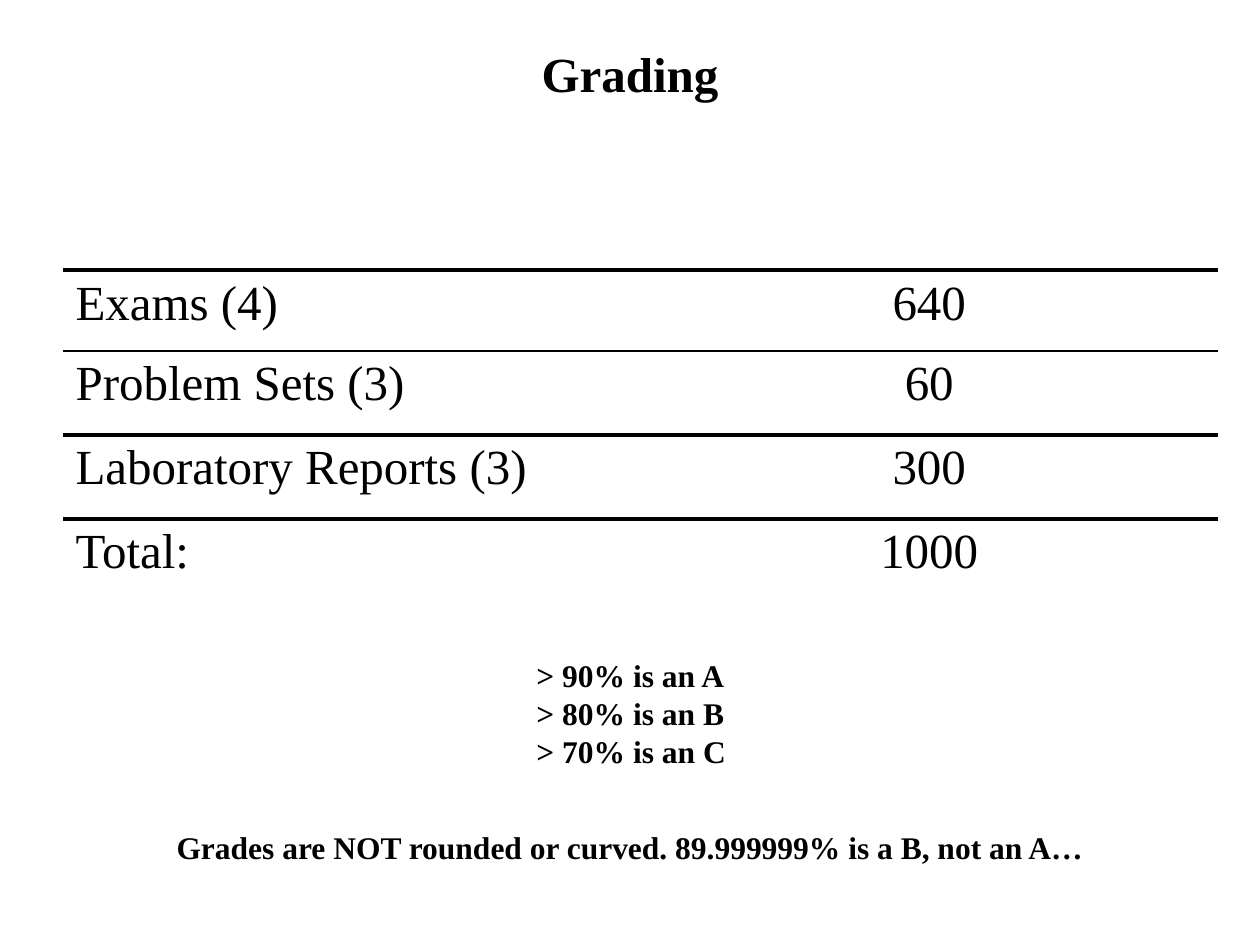
import pptx
import pptx.util
import pptx.dml.color
import pptx.enum.text
import pptx.oxml.ns
import lxml.etree

PX = 914400 / 126
ALIGN = pptx.enum.text.PP_ALIGN
THEME = {
    "font": "Times New Roman",
    "ink": "000000",
    "large": 28,
    "small": 18,
    "thick": 2.25,
    "thin": 1,
}

SCORES = [
    ("Exams (4)", "640"),
    ("Problem Sets (3)", "60"),
    ("Laboratory Reports (3)", "300"),
    ("Total:", "1000"),
]
HEIGHTS = [81, 84, 84, 140]
RULES = ["thick", "thin", "thick", "thick", None]  # above each row, then below the last
GRID = (63, 270, 1155)  # left, top, width

# lines, box (left, top, width, height), size, align, wrap
NOTES = [
    (["Grading"], (0, 37, 1260, 72), "large", ALIGN.CENTER, True),
    (["> 90% is an A", "> 80% is an B", "> 70% is an C"],
     (524, 650, 220, 126), "small", ALIGN.LEFT, False),
    (["Grades are NOT rounded or curved. 89.999999% is a B, not an A…"],
     (0, 822, 1260, 50), "small", ALIGN.CENTER, True),
]


def emu(px):
    return pptx.util.Emu(round(px * PX))


def style(para, size, align, bold=False):
    para.alignment = align
    font = para.font
    font.name = THEME["font"]
    font.size = pptx.util.Pt(THEME[size])
    font.bold = bold
    font.color.rgb = pptx.dml.color.RGBColor.from_string(THEME["ink"])


def border(cell, side, rule):
    """Draw one cell edge, or clear it when rule is None."""
    qn = pptx.oxml.ns.qn
    props = cell._tc.get_or_add_tcPr()
    line = lxml.etree.SubElement(props, qn("a:ln" + side))
    if rule is None:
        lxml.etree.SubElement(line, qn("a:noFill"))
        return
    line.set("w", str(pptx.util.Pt(THEME[rule])))
    fill = lxml.etree.SubElement(line, qn("a:solidFill"))
    lxml.etree.SubElement(fill, qn("a:srgbClr"), val=THEME["ink"])


def add_note(slide, lines, box, size, align, wrap):
    frame = slide.shapes.add_textbox(*map(emu, box)).text_frame
    frame.word_wrap = wrap
    frame.auto_size = pptx.enum.text.MSO_AUTO_SIZE.SHAPE_TO_FIT_TEXT
    frame.text = "\n".join(lines)
    for para in frame.paragraphs:
        style(para, size, align, bold=True)


def add_scores(slide):
    left, top, width = GRID
    box = map(emu, (left, top, width, sum(HEIGHTS)))
    table = slide.shapes.add_table(len(SCORES), 2, *box).table
    table.first_row = table.horz_banding = False
    for col in table.columns:
        col.width = emu(width / 2)
    for r, texts in enumerate(SCORES):
        table.rows[r].height = emu(HEIGHTS[r])
        edges = {"L": None, "R": None, "T": RULES[r], "B": RULES[r + 1]}
        for c, align in enumerate((ALIGN.LEFT, ALIGN.CENTER)):
            cell = table.cell(r, c)
            cell.text = texts[c]
            style(cell.text_frame.paragraphs[0], "large", align)
            for side, rule in edges.items():
                border(cell, side, rule)
            cell.fill.background()


def main():
    deck = pptx.Presentation()
    deck.slide_width, deck.slide_height = emu(1260), emu(945)
    slide = deck.slides.add_slide(deck.slide_layouts[6])
    title, *rest = NOTES
    add_note(slide, *title)
    add_scores(slide)
    for note in rest:
        add_note(slide, *note)
    deck.save("out.pptx")


if __name__ == "__main__":
    main()
